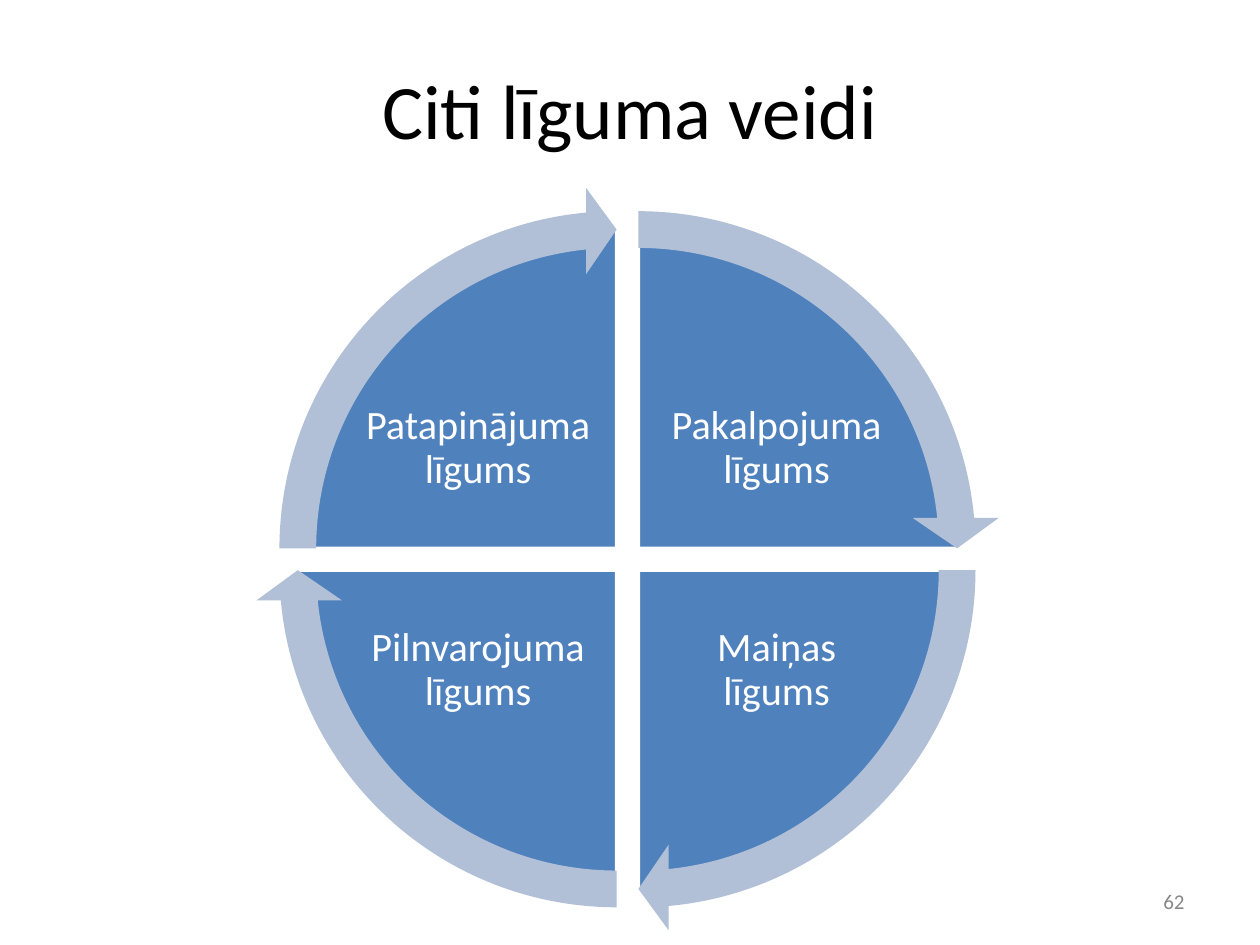
import pptx
import pptx.util
import pptx.dml.color
import pptx.enum.shapes
import pptx.enum.text

Pt = pptx.util.Pt
SHAPE = pptx.enum.shapes.MSO_SHAPE
ALIGN = pptx.enum.text.PP_ALIGN
CENTER_X, CENTER_Y = 358.6, 319.6
GAP = 6.2
QUARTER = 54
HEAD_ANGLE = 3.28


def color(value):
    return pptx.dml.color.RGBColor.from_string(value)


class Deck:
    font = "Calibri"
    pie_color = "4F81BD"
    arrow_color = "B1C0D7"
    white = "FFFFFF"

    def __init__(self, prs):
        self.s = prs.slides.add_slide(prs.slide_layouts[6])

    def text(self, words, x, y, w, h, size, fill, align=ALIGN.CENTER,
             inset=(7.2, 3.6), spacing=1.0):
        sp = self.s.shapes.add_textbox(Pt(x), Pt(y), Pt(w), Pt(h))
        tf = sp.text_frame
        tf.word_wrap = True
        tf.vertical_anchor = pptx.enum.text.MSO_ANCHOR.MIDDLE
        tf.margin_left = tf.margin_right = Pt(inset[0])
        tf.margin_top = tf.margin_bottom = Pt(inset[1])
        p = tf.paragraphs[0]
        p.alignment = align
        p.line_spacing = spacing
        r = p.add_run()
        r.text = words
        r.font.name = self.font
        r.font.size = Pt(size)
        r.font.color.rgb = color(fill)

    def round_shape(self, kind, cx, cy, size, fill, adjustments):
        sp = self.s.shapes.add_shape(
            kind, Pt(cx - size / 2), Pt(cy - size / 2), Pt(size), Pt(size))
        for i, value in enumerate(adjustments):
            sp.adjustments[i] = value
        sp.shadow.inherit = False
        sp.fill.solid()
        sp.fill.fore_color.rgb = color(fill)
        return sp

    def pie(self, cx, cy, start, end):
        sp = self.round_shape(SHAPE.PIE, cx, cy, 368, self.pie_color,
                              (start, end))
        sp.line.color.rgb = color(self.white)
        sp.line.width = Pt(2)

    def arrow(self, cx, cy, start, end):
        tip = (end or 4 * QUARTER) - HEAD_ANGLE
        sp = self.round_shape(SHAPE.CIRCULAR_ARROW, cx, cy, 413.4,
                              self.arrow_color,
                              (0.05085, HEAD_ANGLE, tip, start, 0.05932))
        sp.line.fill.background()


def main():
    prs = pptx.Presentation()
    prs.slide_width, prs.slide_height = Pt(720), Pt(540)
    deck = Deck(prs)
    deck.text("Citi līguma veidi", 36, 17.3, 648, 90, 44, "000000")

    labels = ["Pakalpojuma līgums", "Maiņas līgums",
              "Pilnvarojuma līgums", "Patapinājuma līgums"]
    sides = [(1, -1), (1, 1), (-1, 1), (-1, -1)]
    quarters = [(CENTER_X + GAP * dx, CENTER_Y + GAP * dy,
                 (i + 3) % 4 * QUARTER, i * QUARTER)
                for i, (dx, dy) in enumerate(sides)]
    width, height = 136, 101
    for label, (dx, dy), quarter in zip(labels, sides, quarters):
        deck.pie(*quarter)
        deck.text(label, CENTER_X + 85.3 * dx - width / 2,
                  CENTER_Y + 63.4 * dy - height / 2, width, height, 23,
                  deck.white, inset=(2.3, 2.3), spacing=0.9)
    for quarter in quarters:
        deck.arrow(*quarter)

    deck.text("62", 516, 500.5, 168, 28.8, 12, "888888", ALIGN.RIGHT)
    prs.save("out.pptx")


if __name__ == "__main__":
    main()
